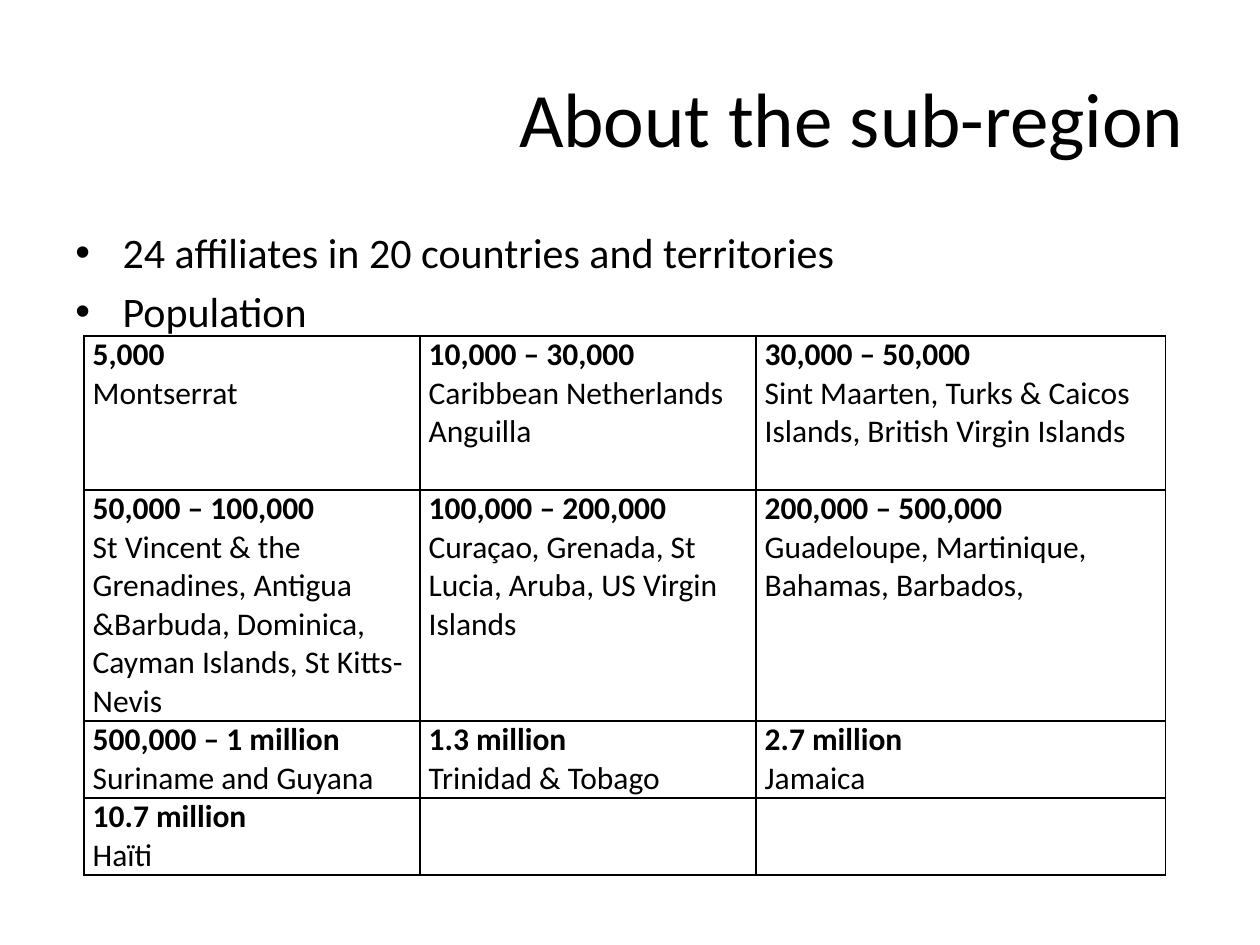
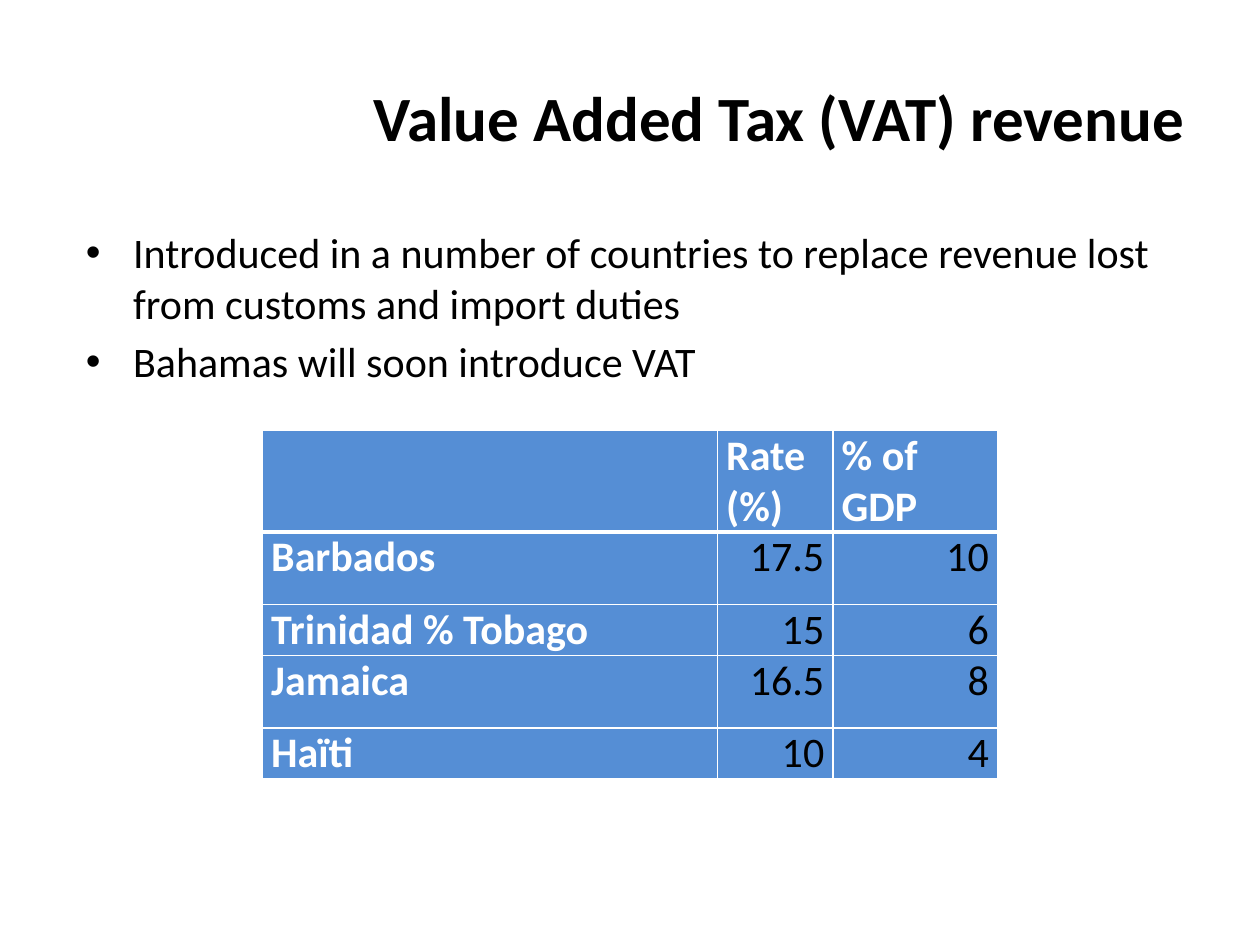
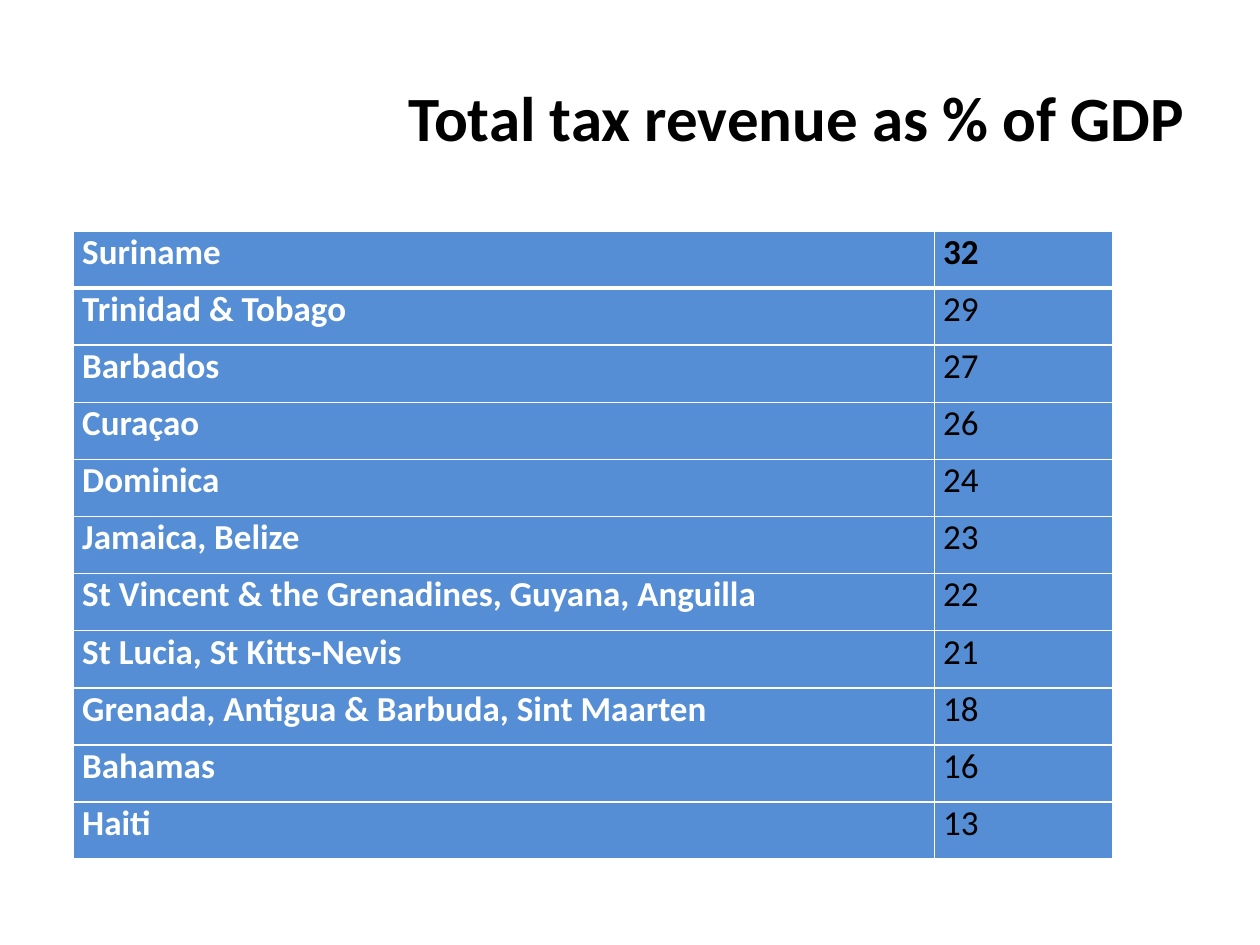
from lxml import etree
from pptx import Presentation
from pptx.dml.color import RGBColor
from pptx.enum.text import MSO_ANCHOR, PP_ALIGN
from pptx.oxml.ns import qn
from pptx.util import Pt

LEFT, RIGHT = PP_ALIGN.LEFT, PP_ALIGN.RIGHT
TOP, MIDDLE = MSO_ANCHOR.TOP, MSO_ANCHOR.MIDDLE
FONT, BLACK, WHITE, BLUE = "Calibri", "000000", "FFFFFF", "558ED5"

SLIDES = [
    {
        "title": ("About the sub-region", 44, False),
        "body": ((36, 126, 648, 356), [
            "24 affiliates in 20 countries and territories",
            "Population",
        ]),
        "table": {
            "spot": (48, 192), "cols": [192, 192, 234],
            "rows": [88, 132, 44, 44], "size": 18, "band": False,
            "data": [
                ["5,000\nMontserrat",
                 "10,000 – 30,000\nCaribbean Netherlands\nAnguilla",
                 "30,000 – 50,000\nSint Maarten, Turks & Caicos Islands, British Virgin Islands"],
                ["50,000 – 100,000\nSt Vincent & the Grenadines, Antigua &Barbuda, Dominica, Cayman Islands, St Kitts-Nevis",
                 "100,000 – 200,000\nCuraçao, Grenada, St Lucia, Aruba, US Virgin Islands",
                 "200,000 – 500,000\nGuadeloupe, Martinique, Bahamas, Barbados,"],
                ["500,000 – 1 million\nSuriname and Guyana",
                 "1.3 million\nTrinidad & Tobago",
                 "2.7 million\nJamaica"],
                ["10.7 million\nHaïti", "", ""],
            ],
        },
    },
    {
        "title": ("Value Added Tax (VAT) revenue", 36, True),
        "body": ((42, 126, 642, 356), [
            "Introduced in a number of countries to replace revenue lost from customs and import duties",
            "Bahamas will soon introduce VAT",
        ]),
        "table": {
            "spot": (150, 246), "cols": [260, 66, 94],
            "rows": [58, 41.5, 29, 41.5, 29], "size": 24, "band": True,
            "align": RIGHT, "head": WHITE,
            "data": [
                ["", "Rate\n(%)", "% of GDP"],
                ["Barbados", "17.5", "10"],
                ["Trinidad % Tobago", "15", "6"],
                ["Jamaica", "16.5", "8"],
                ["Haïti", "10", "4"],
            ],
        },
    },
    {
        "title": ("Total tax revenue as % of GDP", 36, True),
        "table": {
            "spot": (42, 132), "cols": [492, 102],
            "rows": [32.65] * 11, "size": 20, "band": True,
            "align": LEFT, "head": BLACK,
            "data": [
                ["Suriname", "32"],
                ["Trinidad & Tobago", "29"],
                ["Barbados", "27"],
                ["Curaçao", "26"],
                ["Dominica", "24"],
                ["Jamaica, Belize", "23"],
                ["St Vincent & the Grenadines, Guyana, Anguilla", "22"],
                ["St Lucia, St Kitts-Nevis", "21"],
                ["Grenada, Antigua & Barbuda, Sint Maarten", "18"],
                ["Bahamas", "16"],
                ["Haiti", "13"],
            ],
        },
    },
]


def color(code):
    return RGBColor.from_string(code)


def write(frame, lines, size=24, ink=BLACK, bold=False, lead=False,
          align=LEFT, bullet=False):
    frame.word_wrap = True
    for n, line in enumerate(lines):
        para = frame.paragraphs[0] if n == 0 else frame.add_paragraph()
        para.alignment = align
        if bullet:
            prop = para._p.get_or_add_pPr()
            prop.set("marL", str(Pt(27)))
            prop.set("indent", str(-Pt(27)))
            para.space_before = Pt(4.8 if n else 0)
            etree.SubElement(prop, qn("a:buFont"), typeface="Arial")
            etree.SubElement(prop, qn("a:buChar"), char="•")
        font = para.font
        font.name, font.size = FONT, Pt(size)
        font.bold = bold or (lead and n == 0)
        font.color.rgb = color(ink)
        para.add_run().text = line


def add_box(slide, area, lines, anchor=TOP, **form):
    frame = slide.shapes.add_textbox(*map(Pt, area)).text_frame
    frame.vertical_anchor = anchor
    write(frame, lines, **form)


def edge(cell, ink, top, low):
    prop = cell._tc.get_or_add_tcPr()
    for side, wide in zip("LRTB", (1, 1, top, low)):
        line = etree.SubElement(prop, qn("a:ln" + side), w=str(Pt(wide)))
        fill = etree.SubElement(line, qn("a:solidFill"))
        etree.SubElement(fill, qn("a:srgbClr"), val=ink)


def cell_form(info, row, col):
    if not info["band"]:
        return {"lead": True}
    if col == 0:
        return {"ink": WHITE, "bold": True}
    if row == 0:
        return {"ink": info["head"], "bold": True}
    return {"align": info["align"]}


def add_grid(slide, info):
    cols, rows, band = info["cols"], info["rows"], info["band"]
    area = (*info["spot"], sum(cols), sum(rows))
    grid = slide.shapes.add_table(len(rows), len(cols), *map(Pt, area)).table
    grid.first_row = band
    grid.horz_banding = False
    for n, wide in enumerate(cols):
        grid.columns[n].width = Pt(wide)
    for r, high in enumerate(rows):
        grid.rows[r].height = Pt(high)
        for c, text in enumerate(info["data"][r]):
            cell = grid.cell(r, c)
            cell.margin_left = cell.margin_right = Pt(5)
            cell.margin_top = cell.margin_bottom = 0
            edge(cell, WHITE if band else BLACK,
                 3 if band and r == 1 else 1, 3 if band and r == 0 else 1)
            if band:
                cell.fill.solid()
                cell.fill.fore_color.rgb = color(BLUE)
            else:
                cell.fill.background()
            if text:
                write(cell.text_frame, text.split("\n"), size=info["size"],
                      **cell_form(info, r, c))


def main():
    deck = Presentation()
    deck.slide_width, deck.slide_height = Pt(720), Pt(540)
    for page in SLIDES:
        slide = deck.slides.add_slide(deck.slide_layouts[6])
        text, size, bold = page["title"]
        add_box(slide, (36, 21.6, 648, 90), [text], anchor=MIDDLE,
                size=size, bold=bold, align=RIGHT)
        if "body" in page:
            area, lines = page["body"]
            add_box(slide, area, lines, bullet=True)
        add_grid(slide, page["table"])
    deck.save("out.pptx")


if __name__ == "__main__":
    main()
